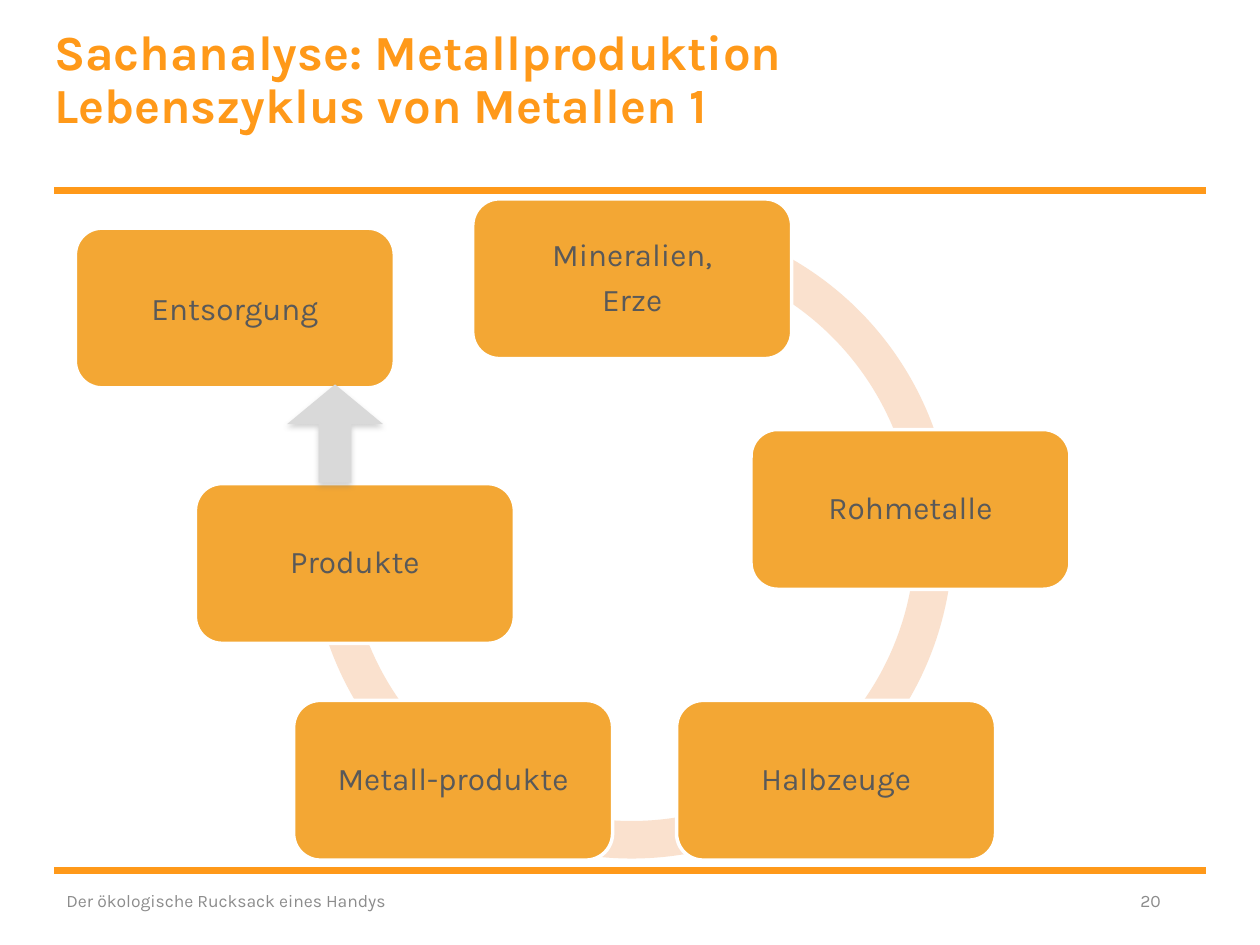
import pptx
import pptx.dml.color
import pptx.enum.shapes
import pptx.enum.text
import pptx.oxml
import pptx.oxml.ns
import pptx.util
from pptx.util import Cm

SHAPE = pptx.enum.shapes.MSO_SHAPE
ALIGN = pptx.enum.text.PP_ALIGN
ANCHOR = pptx.enum.text.MSO_ANCHOR
NS = pptx.oxml.ns.nsdecls("a")


def rgb(value):
    return pptx.dml.color.RGBColor.from_string(value)


class Deck:
    font = "Karla"
    orange, box_fill, ring_fill = "FF9919", "F3A734", "FAE1CE"
    white, arrow_grey = "FFFFFF", "D9D9D9"
    text_grey, footer_grey = "595959", "8C8C8C"

    def __init__(self, width, height):
        self.prs = pptx.Presentation()
        self.prs.slide_width, self.prs.slide_height = Cm(width), Cm(height)
        self.s = self.prs.slides.add_slide(self.prs.slide_layouts[6])

    def set_text(self, sp, text, size, color, bold=False, align=ALIGN.LEFT,
                 anchor=ANCHOR.MIDDLE, inset=None, spacing=None, after=0):
        tf = sp.text_frame
        tf.word_wrap = True
        tf.vertical_anchor = anchor
        if inset is not None:
            tf.margin_left = tf.margin_right = Cm(inset)
            tf.margin_top = tf.margin_bottom = Cm(inset)
        tf.text = text
        for p in tf.paragraphs:
            p.alignment = align
            p.space_after = pptx.util.Pt(after)
            if spacing:
                p.line_spacing = spacing
            for r in p.runs:
                r.font.name, r.font.size = self.font, pptx.util.Pt(size)
                r.font.bold = bold
                r.font.color.rgb = rgb(color)

    def text(self, x, y, w, h, text, size, color, **style):
        sp = self.s.shapes.add_textbox(Cm(x), Cm(y), Cm(w), Cm(h))
        self.set_text(sp, text, size, color, **style)

    def shape(self, kind, x, y, w, h, fill, line=None, adjust=()):
        sp = self.s.shapes.add_shape(kind, Cm(x), Cm(y), Cm(w), Cm(h))
        sp.shadow.inherit = False
        sp.fill.solid()
        sp.fill.fore_color.rgb = rgb(fill)
        if line:
            sp.line.color.rgb = rgb(line)
            sp.line.width = pptx.util.Pt(2)
        else:
            sp.line.fill.background()
        for i, value in enumerate(adjust):
            sp.adjustments[i] = value
        return sp

    def box(self, x, y, text, **style):
        sp = self.shape(SHAPE.ROUNDED_RECTANGLE, x, y, 6.43, 3.22,
                        self.box_fill, self.white)
        self.set_text(sp, text, 18, self.text_grey, align=ALIGN.CENTER,
                      **style)

    def rule(self, y):
        c = self.s.shapes.add_connector(
            pptx.enum.shapes.MSO_CONNECTOR.STRAIGHT,
            Cm(1.09), Cm(y), Cm(24.31), Cm(y))
        c.line.color.rgb = rgb(self.orange)
        c.line.width = pptx.util.Pt(4)
        c._element.spPr.append(pptx.oxml.parse_xml(f"<a:effectLst {NS}/>"))

    def drop_shadow(self, sp):
        effects = sp._element.spPr.find(pptx.oxml.ns.qn("a:effectLst"))
        effects.append(pptx.oxml.parse_xml(
            f'<a:outerShdw {NS} blurRad="39370" dist="22860" dir="5400000" '
            'rotWithShape="0"><a:srgbClr val="808080">'
            '<a:alpha val="35000"/></a:srgbClr></a:outerShdw>'))


def main():
    d = Deck(25.4, 19.05)

    # Rules and title
    for y in (3.84, 17.55):
        d.rule(y)
    d.text(1.09, 0.56, 16.99, 2.97,
           "Sachanalyse: Metallproduktion\vLebenszyklus von Metallen 1",
           28, d.orange, bold=True, anchor=ANCHOR.TOP, inset=0, spacing=0.9)

    # Life cycle: ring with its stations
    d.shape(SHAPE.CIRCULAR_ARROW, 5.84, 3.94, 13.79, 13.79, d.ring_fill,
            adjust=(0.055, 3.307, 137.866, 173.795, 0.058))
    stations = [
        (9.53, 4.01, "Mineralien,\nErze"),
        (15.14, 8.66, "Rohmetalle"),
        (13.64, 14.12, "Halbzeuge"),
        (5.92, 14.12, "Metall-produkte"),
        (3.94, 9.75, "Produkte"),
    ]
    for x, y, name in stations:
        d.box(x, y, name, inset=0.33, spacing=0.9, after=6.3)

    # Gap in the ring and the way out to disposal
    d.shape(SHAPE.ROUNDED_RECTANGLE, 4.93, 4.9, 4.47, 4.83, d.white)
    d.box(1.52, 4.6, "Entsorgung")
    arrow = d.shape(SHAPE.UP_ARROW, 5.79, 7.75, 1.93, 1.98, d.arrow_grey,
                    adjust=(0.343, 0.414))
    d.drop_shadow(arrow)

    # Footer
    d.text(1.09, 17.65, 8.59, 1.02, "Der ökologische Rucksack eines Handys",
           10, d.footer_grey)
    d.text(19.1, 17.65, 4.55, 1.02, "20", 10, d.footer_grey,
           align=ALIGN.RIGHT)

    d.prs.save("out.pptx")


if __name__ == "__main__":
    main()
